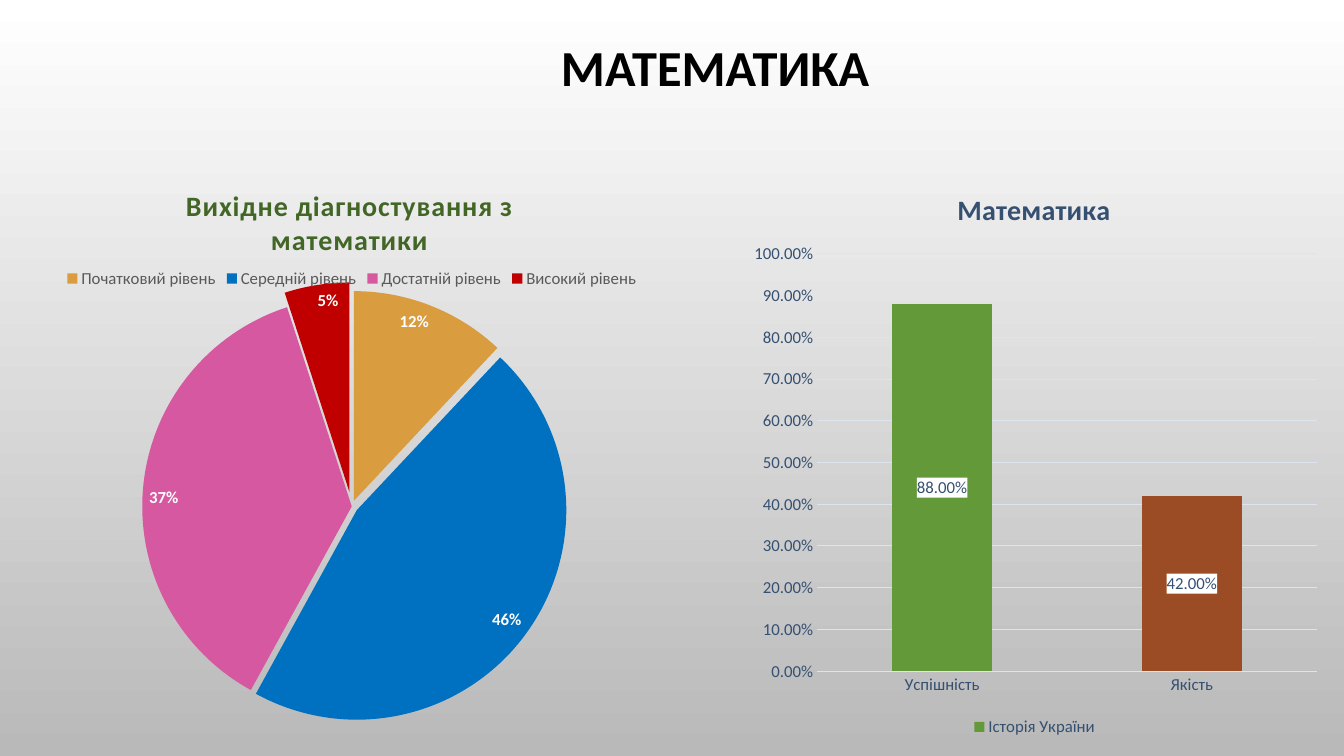
from dataclasses import dataclass

from lxml import etree
from pptx import Presentation
from pptx.chart.data import CategoryChartData
from pptx.dml.color import RGBColor
from pptx.enum.chart import XL_CHART_TYPE, XL_LABEL_POSITION, XL_LEGEND_POSITION, XL_TICK_MARK
from pptx.enum.text import MSO_ANCHOR, PP_ALIGN
from pptx.oxml import parse_xml
from pptx.oxml.ns import nsdecls, qn
from pptx.util import Cm, Pt

PIE = XL_CHART_TYPE.PIE
STACK = XL_CHART_TYPE.COLUMN_STACKED
IN_END = XL_LABEL_POSITION.INSIDE_END
CENTER = XL_LABEL_POSITION.CENTER
TOP = XL_LEGEND_POSITION.TOP
BOTTOM = XL_LEGEND_POSITION.BOTTOM
NO_TICK = XL_TICK_MARK.NONE
MIDDLE = MSO_ANCHOR.MIDDLE
MID = PP_ALIGN.CENTER


@dataclass
class Theme:
    font: str = "Calibri"
    black: str = "000000"
    white: str = "FFFFFF"
    shade: str = "B9B9B9"
    gray: str = "595959"
    moss: str = "426626"
    navy: str = "355071"
    grid: str = "DCE4EF"
    levels: tuple = ("D99C3F", "0070C0", "D658A0", "C00000")
    bars: tuple = ("649939", "9B4C25")
    head: int = 36
    title: int = 20
    text: int = 12


def rgb(code):
    return RGBColor.from_string(code)


def place(parent, index, **parts):
    for old in parent.findall(qn("c:layout")):
        parent.remove(old)
    layout = parse_xml(f"<c:layout {nsdecls('c')}><c:manualLayout/></c:layout>")
    for name, value in parts.items():
        etree.SubElement(layout[0], qn(f"c:{name}")).set("val", str(value))
    parent.insert(index, layout)


class Deck:
    def __init__(self, theme):
        self.theme = theme
        self.prs = Presentation()
        self.prs.slide_width, self.prs.slide_height = Cm(33.87), Cm(19.05)
        self.slide = self.prs.slides.add_slide(self.prs.slide_layouts[5])

    def style(self, font, size, color, bold=False):
        font.name, font.size, font.bold = self.theme.font, Pt(size), bold
        font.color.rgb = rgb(color)

    def back(self):
        fill = self.slide.background.fill
        fill.gradient()
        fill.gradient_angle = 270
        for stop, code in zip(fill.gradient_stops, (self.theme.white, self.theme.shade)):
            stop.color.rgb = rgb(code)

    def title(self, text, box):
        shape = self.slide.shapes.title
        shape.left, shape.top, shape.width, shape.height = map(Cm, box)
        shape.text_frame.vertical_anchor = MIDDLE
        para = shape.text_frame.paragraphs[0]
        para.alignment, para.line_spacing = MID, 0.9
        run = para.add_run()
        run.text = text
        self.style(run.font, self.theme.head, self.theme.black, True)

    def chart(self, kind, box, name, values, form):
        data = CategoryChartData(number_format=form)
        data.categories = list(values)
        data.add_series(name, values.values())
        chart = self.slide.shapes.add_chart(kind, *map(Cm, box), data).chart
        self.style(chart.font, 10, self.theme.black)
        return chart

    def caption(self, chart, lines, color, gap, x, y):
        frame = chart.chart_title.text_frame
        for i, line in enumerate(lines):
            para = frame.add_paragraph() if i else frame.paragraphs[0]
            run = para.add_run()
            run.text = line
            self.style(run.font, self.theme.title, color, True)
            run.font._element.set("spc", str(gap))
        place(chart.chart_title._element, 1, xMode="edge", yMode="edge", x=x, y=y)

    def plot(self, chart, x, y, w, h):
        area = chart._chartSpace.find(".//" + qn("c:plotArea"))
        place(area, 0, layoutTarget="inner", xMode="edge", yMode="edge", x=x, y=y, w=w, h=h)

    def legend(self, chart, spot, color):
        chart.has_legend = True
        chart.legend.position = spot
        chart.legend.include_in_layout = False
        self.style(chart.legend.font, self.theme.text, color)

    def paint(self, series, colors):
        for i, code in enumerate(colors):
            fill = series.points[i].format.fill
            fill.solid()
            fill.fore_color.rgb = rgb(code)

    def labels(self, series, form, color, spot, bold=False):
        labels = series.data_labels
        self.style(labels.font, self.theme.text, color, bold)
        labels.number_format, labels.number_format_is_linked = form, False
        labels.position = spot
        return labels

    def pie(self, box, lines, values, burst):
        theme = self.theme
        chart = self.chart(PIE, box, "Series 1", values, "General")
        self.caption(chart, lines, theme.moss, 50, 0.26, 0.04)
        self.plot(chart, 0.2, 0.24, 0.6, 0.74)
        self.legend(chart, TOP, theme.gray)
        chart.plots[0].vary_by_categories = True
        series = chart.plots[0].series[0]
        self.paint(series, theme.levels)
        for point, size in zip(series._element.findall(qn("c:dPt")), burst):
            part = etree.Element(qn("c:explosion"), val=str(size))
            point.find(qn("c:spPr")).addprevious(part)
        labels = self.labels(series, "0%", theme.white, IN_END, True)
        labels.show_percentage, labels.show_value = True, False

    def column(self, box, lines, name, values):
        theme = self.theme
        chart = self.chart(STACK, box, name, values, "0.00%")
        self.caption(chart, lines, theme.navy, 0, 0.36, 0.04)
        self.plot(chart, 0.13, 0.16, 0.85, 0.72)
        self.legend(chart, BOTTOM, theme.navy)
        plot = chart.plots[0]
        plot.gap_width, plot.overlap, plot.vary_by_categories = 150, 100, False
        series = plot.series[0]
        series.format.fill.solid()
        series.format.fill.fore_color.rgb = rgb(theme.bars[0])
        self.paint(series, theme.bars)
        labels = self.labels(series, "0.00%", theme.navy, CENTER)
        labels.show_value = True
        patch = parse_xml(
            f"<c:spPr {nsdecls('c', 'a')}><a:solidFill>"
            f'<a:srgbClr val="{theme.white}"/></a:solidFill></c:spPr>'
        )
        labels._element.find(qn("c:txPr")).addprevious(patch)
        cat, val = chart.category_axis, chart.value_axis
        for axis in (cat, val):
            axis.major_tick_mark = axis.minor_tick_mark = NO_TICK
            self.style(axis.tick_labels.font, theme.text, theme.navy)
        val.minimum_scale, val.maximum_scale, val.major_unit = 0, 1, 0.1
        val.tick_labels.number_format = "0.00%"
        val.tick_labels.number_format_is_linked = False
        val.format.line.fill.background()
        for line in (cat.format.line, val.major_gridlines.format.line):
            line.color.rgb = rgb(theme.grid)
            line.width = Pt(0.75)


def main():
    deck = Deck(Theme())
    deck.back()
    deck.title("МАТЕМАТИКА", (5.64, 0, 24.77, 3.56))
    levels = {
        "Початковий рівень": 12,
        "Середній рівень": 46,
        "Достатній рівень": 37,
        "Високий рівень": 5,
    }
    lines = ("Вихідне діагностування з", "математики")
    deck.pie((0, 4.06, 17.73, 14.27), lines, levels, (3, 3, 0, 7))
    rates = {"Успішність": 0.88, "Якість": 0.42}
    deck.column((18.67, 4.06, 14.81, 14.61), ("Математика",), "Історія України", rates)
    deck.prs.save("out.pptx")


if __name__ == "__main__":
    main()
